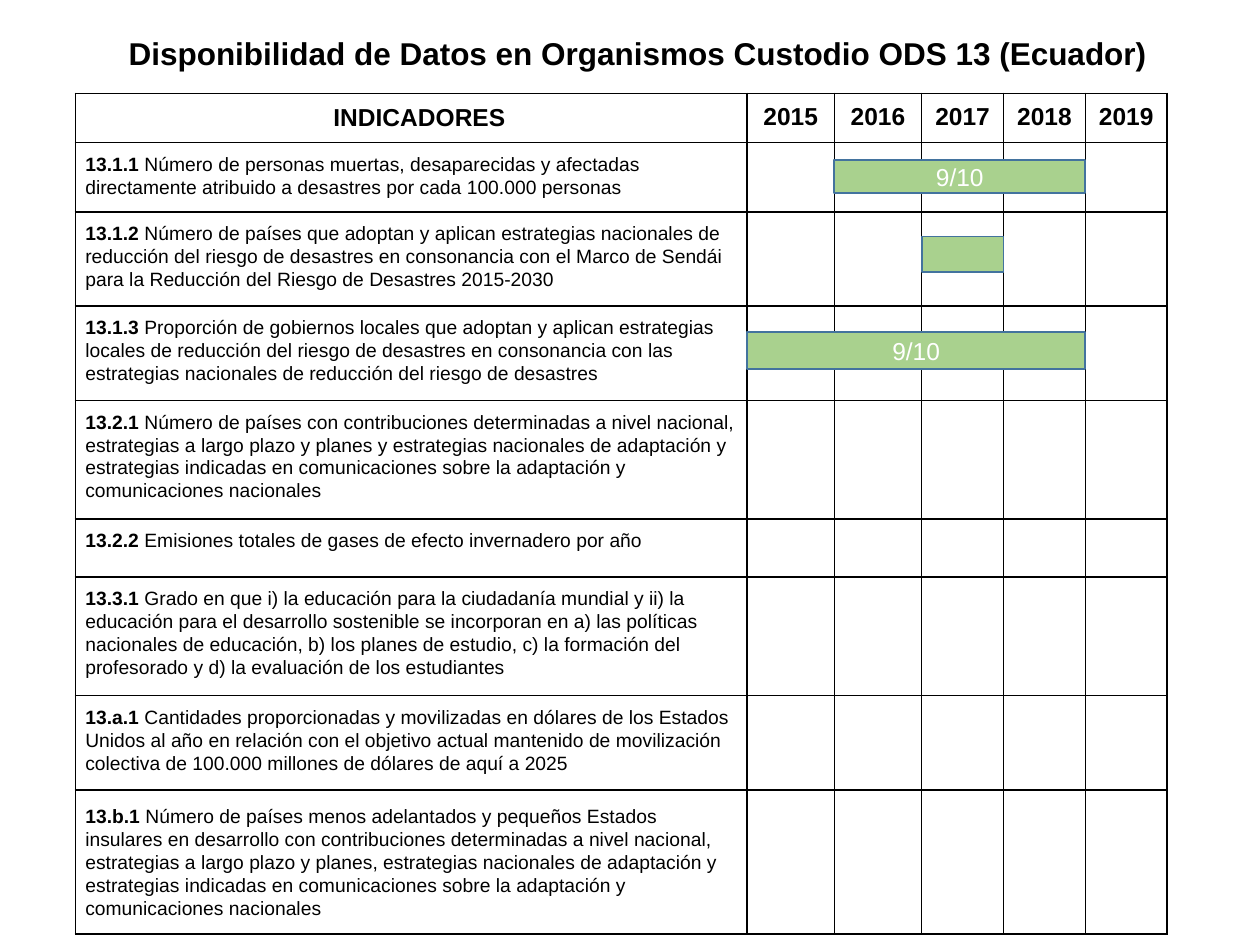
from itertools import product

from lxml import etree
from pptx import Presentation
from pptx import util as u
from pptx.dml.color import RGBColor
from pptx.enum import shapes, text
from pptx.oxml import ns

BLACK = RGBColor(0x00, 0x00, 0x00)
WHITE = RGBColor(0xFF, 0xFF, 0xFF)
GREEN = RGBColor(0xA9, 0xD1, 0x8E)
BLUE = RGBColor(0x43, 0x73, 0x9E)
FONT = "Arial"

TITLE = "Disponibilidad de Datos en Organismos Custodio ODS 13 (Ecuador)"
YEARS = [2015, 2016, 2017, 2018, 2019]
INDICATORS = [
    ("13.1.1", "Número de personas muertas, desaparecidas y afectadas directamente "
     "atribuido a desastres por cada 100.000 personas"),
    ("13.1.2", "Número de países que adoptan y aplican estrategias nacionales de "
     "reducción del riesgo de desastres en consonancia con el Marco de Sendái para la "
     "Reducción del Riesgo de Desastres 2015‑2030"),
    ("13.1.3", "Proporción de gobiernos locales que adoptan y aplican estrategias "
     "locales de reducción del riesgo de desastres en consonancia con las estrategias "
     "nacionales de reducción del riesgo de desastres"),
    ("13.2.1", "Número de países con contribuciones determinadas a nivel nacional, "
     "estrategias a largo plazo y planes y estrategias nacionales de adaptación y "
     "estrategias indicadas en comunicaciones sobre la adaptación y comunicaciones "
     "nacionales"),
    ("13.2.2", "Emisiones totales de gases de efecto invernadero por año"),
    ("13.3.1", "Grado en que i) la educación para la ciudadanía mundial y ii) la "
     "educación para el desarrollo sostenible se incorporan en a) las políticas "
     "nacionales de educación, b) los planes de estudio, c) la formación del "
     "profesorado y d) la evaluación de los estudiantes"),
    ("13.a.1", "Cantidades proporcionadas y movilizadas en dólares de los Estados Unidos "
     "al año en relación con el objetivo actual mantenido de movilización colectiva de "
     "100.000 millones de dólares de aquí a 2025"),
    ("13.b.1", "Número de países menos adelantados y pequeños Estados insulares en "
     "desarrollo con contribuciones determinadas a nivel nacional, estrategias a largo "
     "plazo y planes, estrategias nacionales de adaptación y estrategias indicadas en "
     "comunicaciones sobre la adaptación y comunicaciones nacionales"),
]
COLUMN_WIDTHS = [13.54, 1.76, 1.76, 1.65, 1.65, 1.65]
ROW_HEIGHTS = [0.99, 1.4, 1.9, 1.9, 2.39, 1.0, 2.39, 1.9, 2.9]
# Each bar: row, first year, last year, offset in row, height, label
BARS = [
    (1, 2016, 2018, 0.36, 0.66, "9/10"),
    (2, 2017, 2017, 0.5, 0.71, ""),
    (3, 2015, 2018, 0.53, 0.74, "9/10"),
]


def style_font(font, size, color, bold=False):
    """Set the typeface, size, colour and weight of a font."""
    font.name, font.size, font.bold = FONT, u.Pt(size), bold
    font.color.rgb = color


def style_cell(cell):
    """Give a cell a white fill, even margins and thin black borders."""
    cell.fill.solid()
    cell.fill.fore_color.rgb = WHITE
    cell.margin_left = cell.margin_right = u.Cm(0.2)
    cell.margin_top = cell.margin_bottom = u.Cm(0.2)
    props = cell._tc.get_or_add_tcPr()
    for place, side in enumerate(("lnL", "lnR", "lnT", "lnB")):
        line = etree.Element(ns.qn(f"a:{side}"), w=str(u.Pt(1)))
        fill = etree.SubElement(line, ns.qn("a:solidFill"))
        etree.SubElement(fill, ns.qn("a:srgbClr"), val=str(BLACK))
        props.insert(place, line)


def add_title(page, left, top, width, height):
    """Place the slide title in the given box."""
    title = page.shapes.title
    title.left, title.top = u.Cm(left), u.Cm(top)
    title.width, title.height = u.Cm(width), u.Cm(height)
    frame = title.text_frame
    frame.text = TITLE
    frame.word_wrap = True
    frame.auto_size = text.MSO_AUTO_SIZE.NONE
    frame.vertical_anchor = text.MSO_ANCHOR.MIDDLE
    para = frame.paragraphs[0]
    para.alignment = text.PP_ALIGN.CENTER
    style_font(para.font, 18, BLACK, True)


def add_indicator_table(page, left, top):
    """Place the table of indicators and years with its corner at left, top."""
    rows, columns = len(ROW_HEIGHTS), len(COLUMN_WIDTHS)
    table = page.shapes.add_table(
        rows, columns, u.Cm(left), u.Cm(top),
        u.Cm(sum(COLUMN_WIDTHS)), u.Cm(sum(ROW_HEIGHTS))).table
    table.first_row = table.horz_banding = False
    for column, width in zip(table.columns, COLUMN_WIDTHS):
        column.width = u.Cm(width)
    for row, height in zip(table.rows, ROW_HEIGHTS):
        row.height = u.Cm(height)
    for row, column in product(range(rows), range(columns)):
        style_cell(table.cell(row, column))

    for column, label in enumerate(["INDICADORES", *YEARS]):
        cell = table.cell(0, column)
        cell.text = str(label)
        para = cell.text_frame.paragraphs[0]
        para.alignment = text.PP_ALIGN.CENTER
        para.space_before = para.space_after = u.Pt(6)
        style_font(para.font, 14, BLACK, True)
    heading = table.cell(0, 0)
    heading.vertical_anchor = text.MSO_ANCHOR.MIDDLE
    heading.text_frame.paragraphs[0]._p.get_or_add_pPr().set("indent", str(u.Cm(0.33)))

    for row, (code, wording) in enumerate(INDICATORS, 1):
        para = table.cell(row, 0).text_frame.paragraphs[0]
        para.line_spacing = 1.07
        style_font(para.font, 11, BLACK)
        span = para.add_run()
        span.text = code
        span.font.bold = True
        para.add_run().text = f" {wording}"
    table.cell(rows - 1, 0).vertical_anchor = text.MSO_ANCHOR.MIDDLE


def add_availability_bars(page, left, top):
    """Place the bars of available years over the table at left, top."""
    group = page.shapes.add_group_shape()
    for row, first, last, offset, height, label in BARS:
        start = YEARS.index(first) + 1
        end = YEARS.index(last) + 2
        bar = group.shapes.add_shape(
            shapes.MSO_SHAPE.RECTANGLE,
            u.Cm(left + sum(COLUMN_WIDTHS[:start])),
            u.Cm(top + sum(ROW_HEIGHTS[:row]) + offset),
            u.Cm(sum(COLUMN_WIDTHS[start:end])), u.Cm(height))
        bar.shadow.inherit = False
        bar.fill.solid()
        bar.fill.fore_color.rgb = GREEN
        bar.line.color.rgb = BLUE
        bar.line.width = u.Pt(1)
        if label:
            frame = bar.text_frame
            frame.text = label
            frame.vertical_anchor = text.MSO_ANCHOR.MIDDLE
            para = frame.paragraphs[0]
            para.alignment = text.PP_ALIGN.CENTER
            style_font(para.font, 14, WHITE)


def main():
    """Build the slide and save it."""
    deck = Presentation()
    deck.slide_width, deck.slide_height = u.Cm(25.4), u.Cm(19.05)
    page = deck.slides.add_slide(deck.slide_layouts.get_by_name("Title Only"))
    add_title(page, 1.52, 0.56, 22.68, 1.02)
    add_indicator_table(page, 1.52, 1.88)
    add_availability_bars(page, 1.52, 1.88)
    deck.save("out.pptx")


if __name__ == "__main__":
    main()
